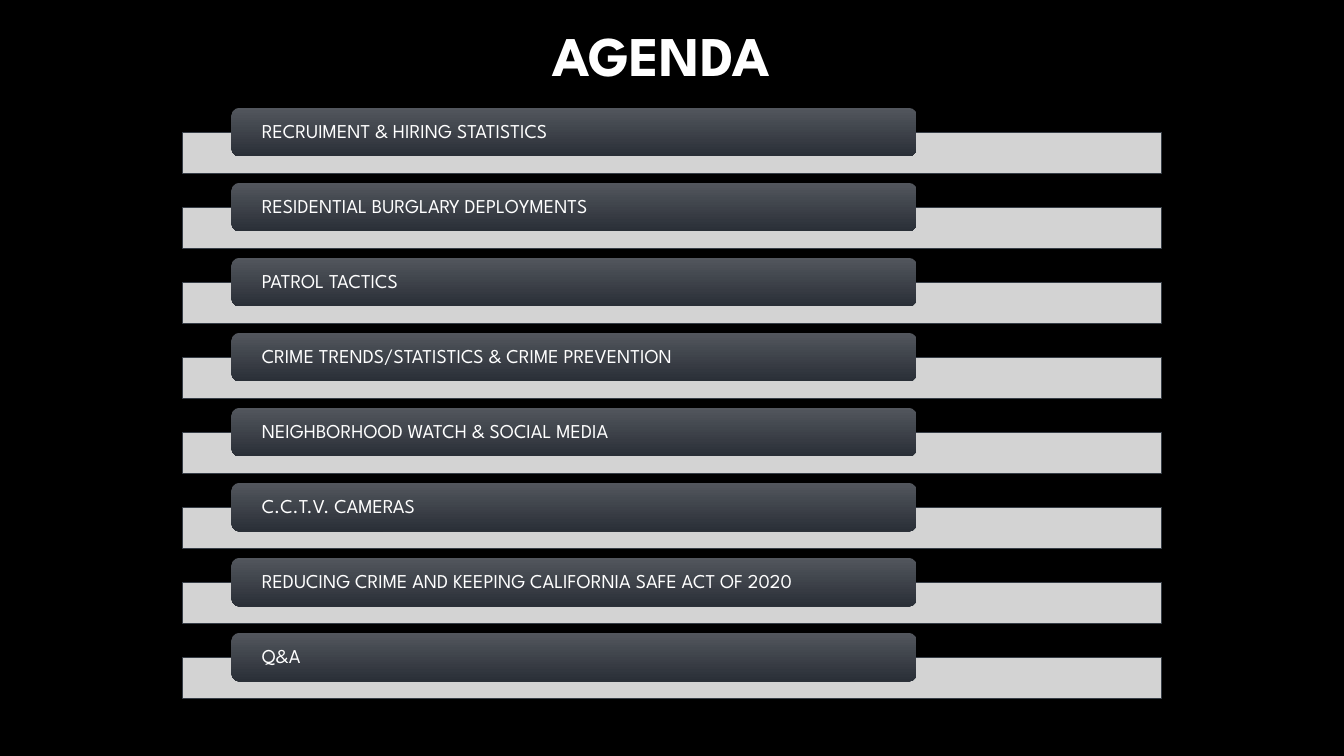
from lxml import etree
from pptx import Presentation
from pptx.dml.color import RGBColor
from pptx.enum import shapes, text
from pptx.oxml import ns
from pptx.util import Pt

FONT = "League Spartan"
TOPICS = [
    "RECRUIMENT & HIRING STATISTICS",
    "RESIDENTIAL BURGLARY DEPLOYMENTS",
    "PATROL TACTICS",
    "CRIME TRENDS/STATISTICS & CRIME PREVENTION",
    "NEIGHBORHOOD WATCH & SOCIAL MEDIA",
    "C.C.T.V. CAMERAS",
    "REDUCING CRIME AND KEEPING CALIFORNIA SAFE ACT OF 2020",
    "Q&A",
]


def color(hex_string):
    return RGBColor.from_string(hex_string)


def style_span(span, size, bold=False):
    span.font.name = FONT
    span.font.size = Pt(size)
    span.font.bold = bold
    span.font.color.rgb = color("FFFFFF")


def add_panel(page, kind, left, top, width, height):
    panel = page.shapes.add_shape(kind, Pt(left), Pt(top), Pt(width), Pt(height))
    panel.shadow.inherit = False
    return panel


def add_title(page, left, top, width, height):
    box = page.shapes.add_textbox(Pt(left), Pt(top), Pt(width), Pt(height))
    frame = box.text_frame
    frame.word_wrap = True
    frame.vertical_anchor = text.MSO_ANCHOR.MIDDLE
    para = frame.paragraphs[0]
    para.alignment = text.PP_ALIGN.CENTER
    # The smaller closing space nudges the centred word to the left
    for words, size, bold in (("AGENDA", 40, True), (" ", 32, False)):
        span = para.add_run()
        span.text = words
        style_span(span, size, bold)


def add_topic(page, topic, left, top, width):
    # Pale bar behind
    bar = add_panel(page, shapes.MSO_SHAPE.RECTANGLE, left, top + 17.4, width, 29.4)
    bar.fill.solid()
    bar.fill.fore_color.rgb = color("EBEBEB")
    shade = bar.fill._xPr.find(".//" + ns.qn("a:srgbClr"))
    etree.SubElement(shade, ns.qn("a:alpha"), val="90000")
    bar.line.color.rgb = color("363D46")
    bar.line.width = Pt(0.75)

    # Dark label in front
    label = add_panel(page, shapes.MSO_SHAPE.ROUNDED_RECTANGLE,
                      left + width * 0.05, top, width * 0.7, 34.8)
    label.fill.gradient()
    label.fill.gradient_angle = 270
    for stop, shade in zip(label.fill.gradient_stops, ("52565D", "2A2F37")):
        stop.color.rgb = color(shade)
    label.line.fill.background()

    frame = label.text_frame
    frame.text = topic
    frame.word_wrap = True
    frame.vertical_anchor = text.MSO_ANCHOR.MIDDLE
    frame.margin_left = frame.margin_right = Pt(20)
    frame.margin_top = frame.margin_bottom = 0
    para = frame.paragraphs[0]
    para.alignment = text.PP_ALIGN.LEFT
    para.line_spacing = 0.9
    style_span(para.runs[0], 14)


def add_agenda(page, left, top, width, height):
    row_height = 46.8
    pitch = (height - row_height) / (len(TOPICS) - 1)
    for row, topic in enumerate(TOPICS):
        add_topic(page, topic, left, top + row * pitch, width)


def main():
    deck = Presentation()
    deck.slide_width, deck.slide_height = Pt(960), Pt(540)
    page = deck.slides.add_slide(deck.slide_layouts[6])
    page.background.fill.solid()
    page.background.fill.fore_color.rgb = color("000000")
    add_title(page, 260, 0, 432.7, 77.8)
    add_agenda(page, 130.4, 77, 699.2, 421.8)
    deck.save("out.pptx")


if __name__ == "__main__":
    main()
